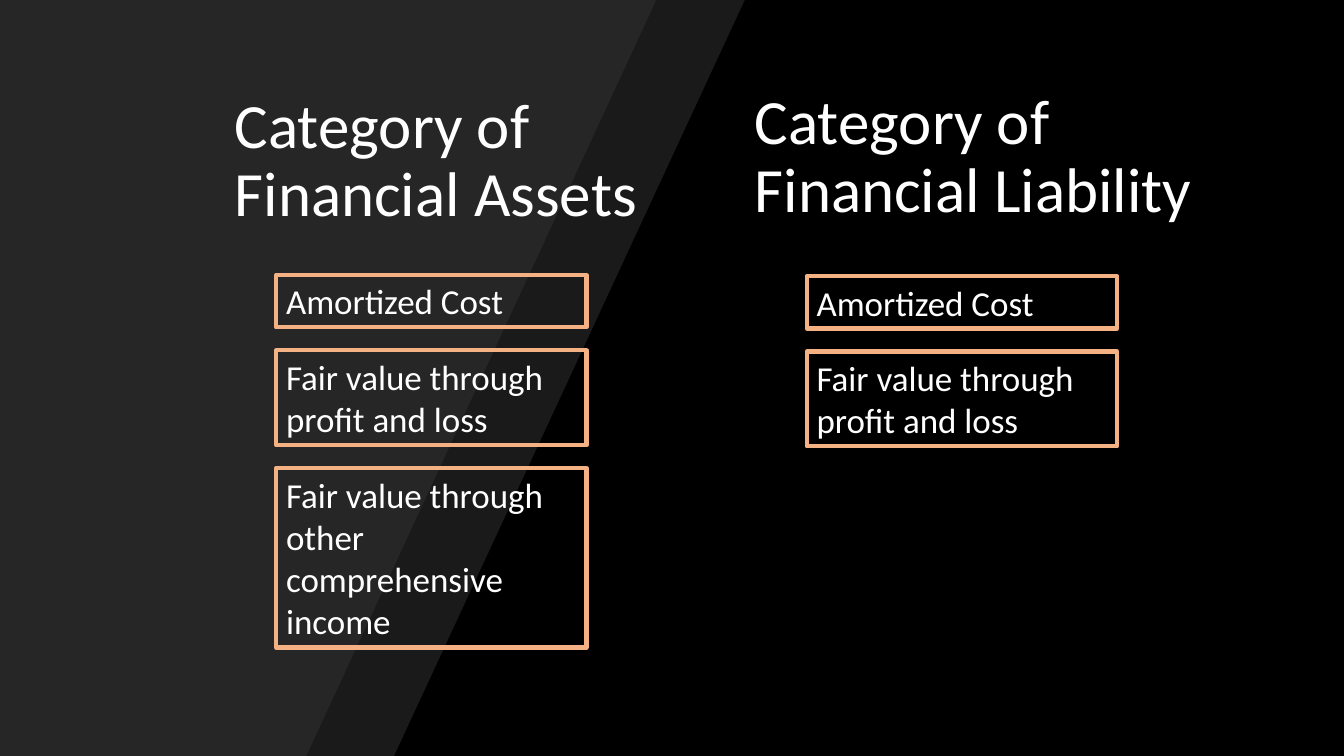
import dataclasses

import lxml.etree
import pptx
import pptx.dml.color
import pptx.enum.shapes
import pptx.enum.text
import pptx.oxml.ns
import pptx.util

Cm = pptx.util.Cm
PAGE_WIDTH, PAGE_HEIGHT = 33.87, 19.05
BOX_WIDTH, BOX_GAP = 7.82, 0.58
TITLE_ONLY = 5


@dataclasses.dataclass(frozen=True)
class Theme:
    background: str = "000000"
    band: str = "262626"
    outline: str = "F4B183"
    text: str = "FFFFFF"
    font: str = "Calibri"
    heading_size: int = 45
    item_size: int = 25
    outline_width: int = 3


THEME = Theme()


def color(value):
    return pptx.dml.color.RGBColor.from_string(value)


def write_text(shape, text, size, anchor):
    frame = shape.text_frame
    frame.text = text
    frame.word_wrap = True
    frame.auto_size = pptx.enum.text.MSO_AUTO_SIZE.NONE
    frame.vertical_anchor = anchor
    para = frame.paragraphs[0]
    para.alignment = pptx.enum.text.PP_ALIGN.LEFT
    for span in para.runs:
        span.font.name = THEME.font
        span.font.size = pptx.util.Pt(size)
        span.font.color.rgb = color(THEME.text)
    return para


def add_band(page, top_width, bottom_width, opacity=100):
    """Draw a slanted panel from the left edge of the page."""
    builder = page.shapes.build_freeform(0, 0)
    corners = [(top_width, 0), (bottom_width, PAGE_HEIGHT), (0, PAGE_HEIGHT)]
    builder.add_line_segments([(Cm(x), Cm(y)) for x, y in corners], close=True)
    band = builder.convert_to_shape()
    band.shadow.inherit = False
    band.line.fill.background()
    band.fill.solid()
    band.fill.fore_color.rgb = color(THEME.band)
    if opacity < 100:
        fill_color = band.element.spPr.find(".//" + pptx.oxml.ns.qn("a:srgbClr"))
        alpha = lxml.etree.SubElement(fill_color, pptx.oxml.ns.qn("a:alpha"))
        alpha.set("val", str(opacity * 1000))


def format_heading(shape, text):
    para = write_text(shape, text, THEME.heading_size,
                      pptx.enum.text.MSO_ANCHOR.BOTTOM)
    para.line_spacing = 0.9


def add_item_box(page, text, left, top, height):
    box = page.shapes.add_shape(
        pptx.enum.shapes.MSO_SHAPE.RECTANGLE,
        Cm(left), Cm(top), Cm(BOX_WIDTH), Cm(height))
    box.shadow.inherit = False
    box.fill.background()
    box.line.color.rgb = color(THEME.outline)
    box.line.width = pptx.util.Pt(THEME.outline_width)
    write_text(box, text, THEME.item_size, pptx.enum.text.MSO_ANCHOR.TOP)


def add_item_column(page, items, left, top):
    """Stack boxes downwards with an equal gap."""
    for text, height in items:
        add_item_box(page, text, left, top, height)
        top += height + BOX_GAP


def main():
    deck = pptx.Presentation()
    deck.slide_width, deck.slide_height = Cm(PAGE_WIDTH), Cm(PAGE_HEIGHT)
    page = deck.slides.add_slide(deck.slide_layouts[TITLE_ONLY])
    page.background.fill.solid()
    page.background.fill.fore_color.rgb = color(THEME.background)

    # Slanted panels
    add_band(page, 18.77, 9.93, opacity=70)
    add_band(page, 16.54, 7.72)

    # Headings, with the title brought in front of the panels
    title = page.shapes.title
    title.left, title.top = Cm(5.66), Cm(1.96)
    title.width, title.height = Cm(10.8), Cm(3.96)
    format_heading(title, "Category of Financial Assets")
    title.element.getparent().append(title.element)
    liability_heading = page.shapes.add_textbox(
        Cm(18.77), Cm(2.06), Cm(11.86), Cm(3.76))
    format_heading(liability_heading, "Category of Financial Liability")

    # Measurement categories
    shared_items = [
        ("Amortized Cost", 1.32),
        ("Fair value through profit and loss", 2.39),
    ]
    asset_items = shared_items + [
        ("Fair value through other comprehensive income", 4.52),
    ]
    add_item_column(page, asset_items, left=6.96, top=6.93)
    add_item_column(page, shared_items, left=20.33, top=6.96)

    deck.save("out.pptx")


if __name__ == "__main__":
    main()
